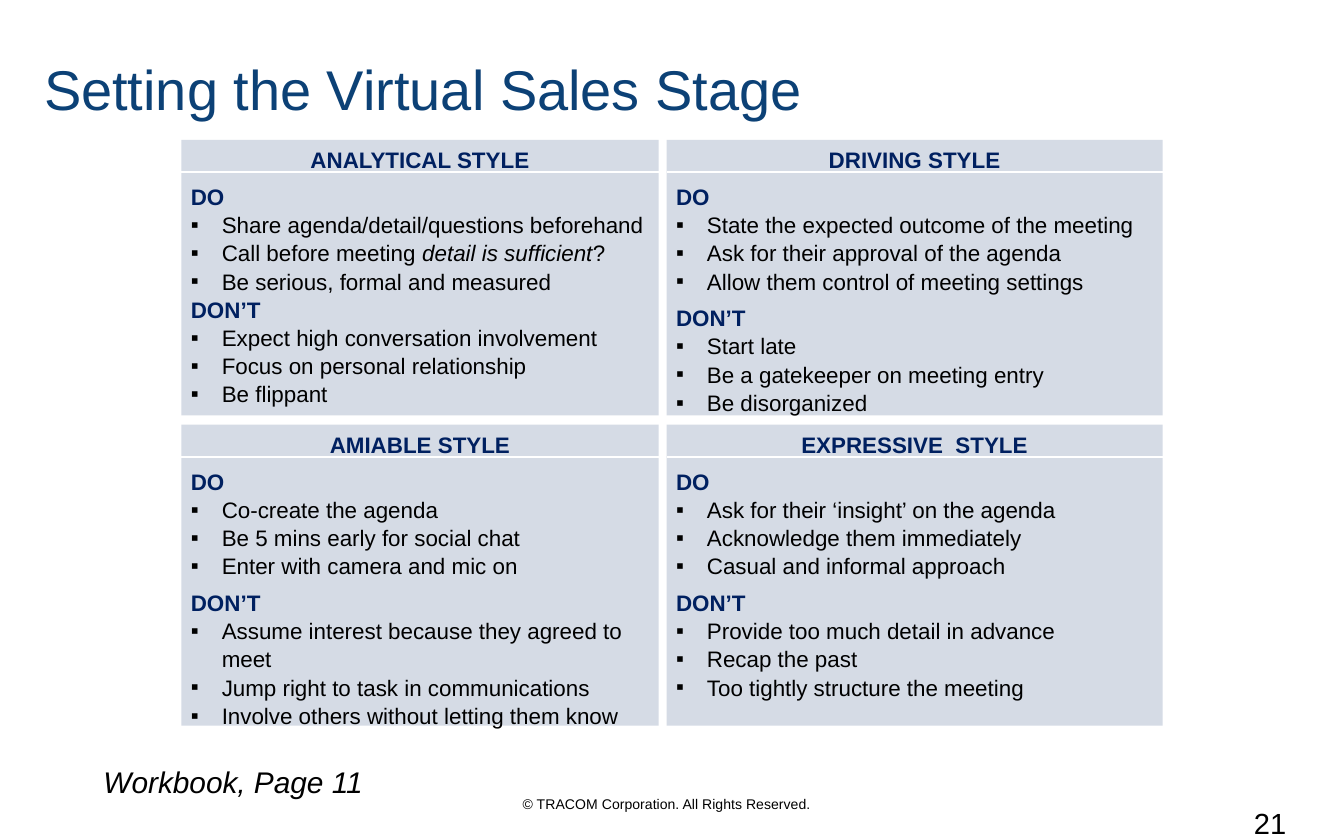
from lxml.etree import SubElement
from pptx import Presentation
from pptx.dml.color import RGBColor as RGB
from pptx.enum.shapes import MSO_CONNECTOR as CONN, MSO_SHAPE as SHAPE
from pptx.enum.text import MSO_ANCHOR as ANCHOR, PP_ALIGN as ALIGN
from pptx.oxml.ns import qn
from pptx.util import Emu, Pt

BLACK = RGB(0x00, 0x00, 0x00)
WHITE = RGB(0xFF, 0xFF, 0xFF)
TITLE_BLUE = RGB(0x0C, 0x41, 0x76)
NAVY = RGB(0x00, 0x20, 0x60)
PANEL_GREY = RGB(0xD5, 0xDB, 0xE5)

PX_PER_INCH = 100
HEADER_H = 24
GAP = 4.5

COLUMNS = [(135, 355), (496, 369)]
ROWS = [(104, 205), (316, 224)]
PANELS = [
    (0, 0, "ANALYTICAL STYLE", 0,
     ["Share agenda/detail/questions beforehand",
      "Call before meeting *detail is sufficient*?",
      "Be serious, formal and measured"],
     ["Expect high conversation involvement",
      "Focus on personal relationship",
      "Be flippant"]),
    (1, 0, "DRIVING STYLE", GAP,
     ["State the expected outcome of the meeting",
      "Ask for their approval of the agenda",
      "Allow them control of meeting settings"],
     ["Start late",
      "Be a gatekeeper on meeting entry",
      "Be disorganized"]),
    (1, 1, "EXPRESSIVE  STYLE", GAP,
     ["Ask for their ‘insight’ on the agenda",
      "Acknowledge them immediately",
      "Casual and informal approach"],
     ["Provide too much detail in advance",
      "Recap the past",
      "Too tightly structure the meeting"]),
    (0, 1, "AMIABLE STYLE", GAP,
     ["Co-create the agenda",
      "Be 5 mins early for social chat",
      "Enter with camera and mic on"],
     ["Assume interest because they agreed to meet",
      "Jump right to task in communications",
      "Involve others without letting them know"]),
]


def px(n):
    return Emu(n * 914400 // PX_PER_INCH)


def apply(target, **values):
    for name, value in values.items():
        setattr(target, name, value)


class Deck:
    font = "Arial"
    body_size = 12
    body_spacing = 1.05
    indent = 23

    def __init__(self, w, h):
        self.prs = Presentation()
        apply(self.prs, slide_width=px(w), slide_height=px(h))
        self.s = self.prs.slides.add_slide(self.prs.slide_layouts[6])

    def run(self, p, text, size, color, **style):
        r = p.add_run()
        r.text = text
        apply(r.font, name=self.font, size=Pt(size), **style)
        r.font.color.rgb = color

    def text(self, x, y, w, h, text, size, color=BLACK, anchor=ANCHOR.TOP,
             italic=False, **para):
        sp = self.s.shapes.add_textbox(px(x), px(y), px(w), px(h))
        tf = sp.text_frame
        apply(tf, word_wrap=True, vertical_anchor=anchor)
        p = tf.paragraphs[0]
        apply(p, **para)
        self.run(p, text, size, color, italic=italic)

    def heading(self, p, text, **para):
        apply(p, line_spacing=self.body_spacing, **para)
        self.run(p, text, self.body_size, NAVY, bold=True)

    def bullet(self, tf, text):
        p = tf.add_paragraph()
        pPr = p._p.get_or_add_pPr()
        pPr.set("marL", str(px(self.indent)))
        pPr.set("indent", str(-px(self.indent)))
        SubElement(pPr, qn("a:buFont"), typeface=self.font)
        SubElement(pPr, qn("a:buChar"), char="▪")
        apply(p, alignment=ALIGN.LEFT, line_spacing=self.body_spacing)
        for i, part in enumerate(text.split("*")):
            self.run(p, part, self.body_size, BLACK, italic=i % 2 == 1)

    def rule(self, shapes, x, y, w):
        line = shapes.add_connector(CONN.STRAIGHT, px(x), px(y), px(x + w), px(y))
        line.line.color.rgb = WHITE
        line.line.width = Pt(1)
        SubElement(line._element.spPr, qn("a:effectLst"))

    def panel(self, x, y, w, h, name, gap, dos, donts):
        shapes = self.s.shapes.add_group_shape().shapes
        sp = shapes.add_shape(SHAPE.RECTANGLE, px(x), px(y), px(w), px(h))
        sp.shadow.inherit = False
        sp.fill.solid()
        sp.fill.fore_color.rgb = PANEL_GREY
        sp.line.fill.background()
        tf = sp.text_frame
        apply(tf, word_wrap=True, vertical_anchor=ANCHOR.TOP,
              margin_left=px(7), margin_right=px(7),
              margin_top=px(4), margin_bottom=px(4))
        self.heading(tf.paragraphs[0], name, alignment=ALIGN.CENTER,
                     space_after=Pt(GAP))
        for label, before, items in (("DO", 0, dos), ("DON’T", gap, donts)):
            self.heading(tf.add_paragraph(), label, alignment=ALIGN.LEFT,
                         space_before=Pt(before))
            for item in items:
                self.bullet(tf, item)
        self.rule(shapes, x, y + HEADER_H, w)


def main():
    deck = Deck(1000, 625)
    deck.text(326, 587, 340, 23, "© TRACOM Corporation. All Rights Reserved.",
              7.5, alignment=ALIGN.CENTER)
    deck.text(23, 33, 883, 72, "Setting the Virtual Sales Stage", 30,
              TITLE_BLUE, ANCHOR.MIDDLE, line_spacing=0.9)
    for col, row, *content in PANELS:
        x, w = COLUMNS[col]
        y, h = ROWS[row]
        deck.panel(x, y, w, h, *content)
    deck.text(61, 563, 225, 37, "Workbook, Page 11", 16, italic=True,
              alignment=ALIGN.CENTER)
    deck.text(907, 594, 76, 31, "21", 15.6, alignment=ALIGN.CENTER)
    deck.prs.save("out.pptx")


if __name__ == "__main__":
    main()
